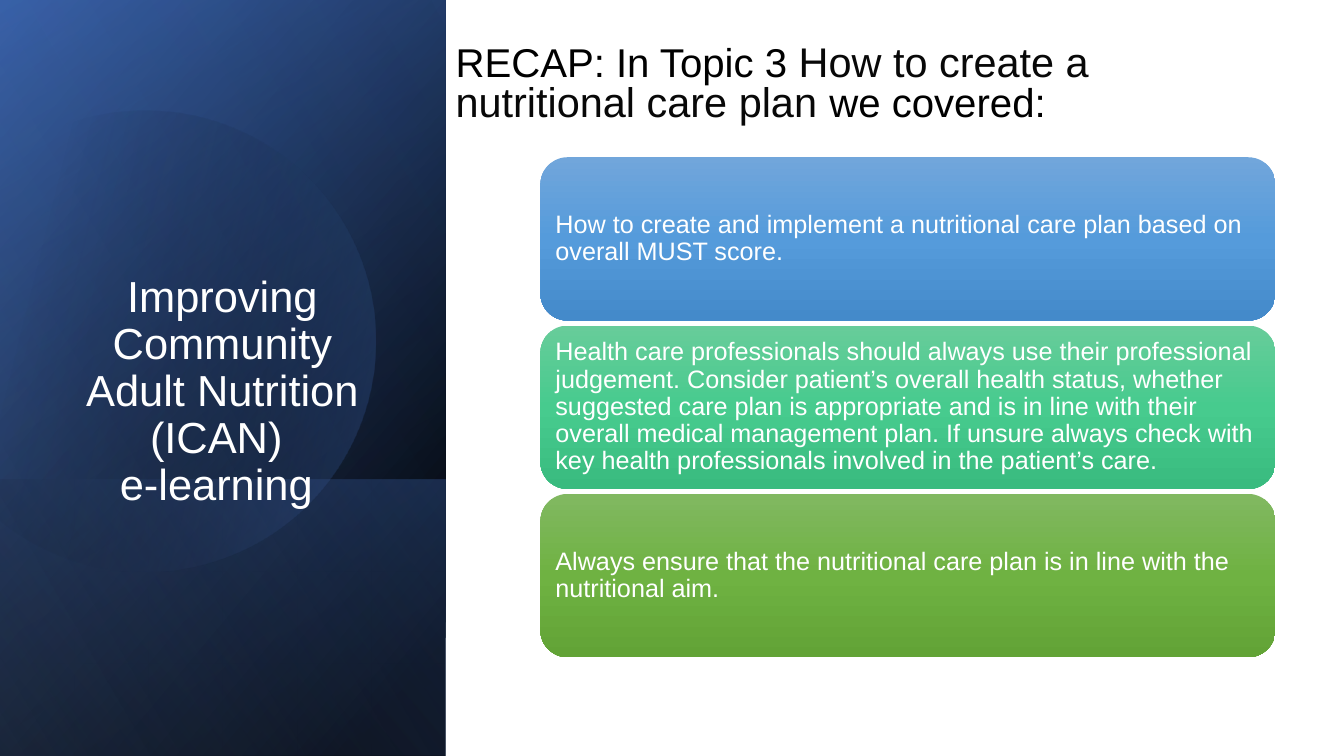
from dataclasses import dataclass
from math import cos, radians, sin

from lxml.etree import SubElement
from pptx import Presentation
from pptx.dml.color import RGBColor
from pptx.enum.shapes import MSO_SHAPE
from pptx.enum.text import MSO_ANCHOR, MSO_AUTO_SIZE, PP_ALIGN
from pptx.oxml.ns import qn
from pptx.util import Inches, Pt


@dataclass(frozen=True)
class Theme:
    """Colours, font and type sizes of the slide."""
    font: str = "Arial"
    white: str = "FFFFFF"
    black: str = "000000"
    soft_black: str = "080808"
    navy: str = "2F5597"
    blue: str = "4472C4"
    pale_blue: str = "8FAADC"
    card_blues: tuple = ("71A6DB", "559BDB", "448ACA")
    card_teals: tuple = ("67CC9A", "47CB8E", "39BB7F")
    card_greens: tuple = ("81B861", "6FB242", "62A336")
    title_size: float = 31
    heading_size: float = 28.7
    heading_topic_size: float = 29.6
    card_size: float = 18


THEME = Theme()
PANEL_FRAME = (-1.54, 1.54, 7.5, 4.42)
PANELS = [
    (PANEL_FRAME, 50, [(8, THEME.black, 100), (100, THEME.navy, 100)]),
    (PANEL_FRAME, 30, [(0, THEME.black, 0), (99, THEME.blue, 46)]),
    ((0.84, 3.92, 2.74, 4.42), 130, [(2, THEME.blue, 29), (100, THEME.black, 30)]),
]
SHEEN = (PANEL_FRAME, 120, [(0, THEME.black, 0), (99, THEME.pale_blue, 11)])
CARDS = [
    ("How to create and implement a nutritional care plan based on overall MUST score.",
     THEME.card_blues),
    ("Health care professionals should always use their professional judgement. "
     "Consider patient’s overall health status, whether suggested care plan is "
     "appropriate and is in line with their overall medical management plan. "
     "If unsure always check with key health professionals involved in the patient’s care.",
     THEME.card_teals),
    ("Always ensure that the nutritional care plan is in line with the nutritional aim.",
     THEME.card_greens),
]
HEADING = [
    ("RECAP: In Topic 3 ", THEME.heading_size, THEME.black),
    ("How to create a nutritional care plan ", THEME.heading_topic_size, THEME.soft_black),
    ("we covered:", THEME.heading_size, THEME.black),
]


def style_font(font, size, color):
    """Apply the slide font with a size and colour."""
    font.name = THEME.font
    font.size = Pt(size)
    font.color.rgb = RGBColor.from_string(color)


def fill_gradient(shape, angle, stops):
    """Give a shape a linear gradient of (position, colour, opacity) stops."""
    shape.shadow.inherit = False
    shape.line.fill.background()
    shape.fill.background()
    empty_fill = shape._element.spPr.find(qn("a:noFill"))
    gradient = SubElement(shape._element.spPr, qn("a:gradFill"), rotWithShape="1")
    empty_fill.getparent().replace(empty_fill, gradient)
    stop_list = SubElement(gradient, qn("a:gsLst"))
    for position, color, opacity in stops:
        stop = SubElement(stop_list, qn("a:gs"), pos=str(position * 1000))
        color_element = SubElement(stop, qn("a:srgbClr"), val=color)
        if opacity < 100:
            SubElement(color_element, qn("a:alpha"), val=str(opacity * 1000))
    SubElement(gradient, qn("a:lin"), ang=str(angle * 60000), scaled="0")


def add_panel(slide, frame, angle, stops):
    """Add a mirrored quarter-turned gradient rectangle."""
    shape = slide.shapes.add_shape(MSO_SHAPE.RECTANGLE, *map(Inches, frame))
    shape.rotation = 90
    shape._element.spPr.find(qn("a:xfrm")).set("flipH", "1")
    fill_gradient(shape, angle, stops)


def add_disc(slide):
    """Add the translucent disc that is cut off by the left edge."""
    center_x, center_y, radius = 1.43, 3.34, 2.29
    tilt, half_sweep, steps = 16.1, 133.3, 120
    angles = [radians(tilt + half_sweep * (2 * step / steps - 1)) for step in range(steps + 1)]
    points = [(Inches(center_x + radius * cos(angle)), Inches(center_y + radius * sin(angle)))
              for angle in angles]
    builder = slide.shapes.build_freeform(*points[0])
    builder.add_line_segments(points[1:], close=True)
    disc = builder.convert_to_shape()
    disc.rotation = -tilt
    fill_gradient(disc, 30, [(29, THEME.black, 0), (100, THEME.blue, 43)])


def place_title(slide, text):
    """Put the course title on the dark panel, in front of it."""
    title = slide.shapes.title
    slide.shapes._spTree.append(title._element)
    title.left, title.top, title.width, title.height = map(Inches, (0.5, 2.49, 3.41, 2.62))
    frame = title.text_frame
    frame.text = text
    frame.word_wrap = True
    frame.auto_size = MSO_AUTO_SIZE.NONE
    frame.vertical_anchor = MSO_ANCHOR.BOTTOM
    paragraph = frame.paragraphs[0]
    paragraph.alignment = PP_ALIGN.CENTER
    paragraph.line_spacing = 0.9
    style_font(paragraph.font, THEME.title_size, THEME.white)


def add_card(slide, top, text, colors):
    """Add a rounded gradient card with its statement."""
    card = slide.shapes.add_shape(
        MSO_SHAPE.ROUNDED_RECTANGLE, Inches(5.36), Inches(top), Inches(7.29), Inches(1.62))
    fill_gradient(card, 90, [(50 * index, color, 100) for index, color in enumerate(colors)])
    frame = card.text_frame
    frame.word_wrap = True
    frame.vertical_anchor = MSO_ANCHOR.MIDDLE
    frame.margin_left = frame.margin_right = Inches(0.07)
    frame.margin_top = frame.margin_bottom = Inches(0.07)
    frame.text = text
    paragraph = frame.paragraphs[0]
    paragraph.alignment = PP_ALIGN.LEFT
    paragraph.line_spacing = 0.9
    style_font(paragraph.font, THEME.card_size, THEME.white)


def add_heading(slide):
    """Add the recap heading above the cards."""
    box = slide.shapes.add_textbox(*map(Inches, (4.42, 0.34, 7.02, 0.95)))
    frame = box.text_frame
    frame.word_wrap = True
    frame.vertical_anchor = MSO_ANCHOR.BOTTOM
    paragraph = frame.paragraphs[0]
    paragraph.line_spacing = 0.8
    for text, size, color in HEADING:
        run = paragraph.add_run()
        run.text = text
        style_font(run.font, size, color)


def main():
    """Build and save the recap slide."""
    presentation = Presentation()
    presentation.slide_width = Inches(13.33)
    presentation.slide_height = Inches(7.5)
    slide = presentation.slides.add_slide(presentation.slide_layouts.get_by_name("Title Only"))
    for panel in PANELS:
        add_panel(slide, *panel)
    add_disc(slide)
    add_panel(slide, *SHEEN)
    place_title(slide, "Improving Community Adult Nutrition (ICAN) \ve-learning ")
    for index, (text, colors) in enumerate(CARDS):
        add_card(slide, 1.56 + 1.67 * index, text, colors)
    add_heading(slide)
    presentation.save("out.pptx")


if __name__ == "__main__":
    main()
